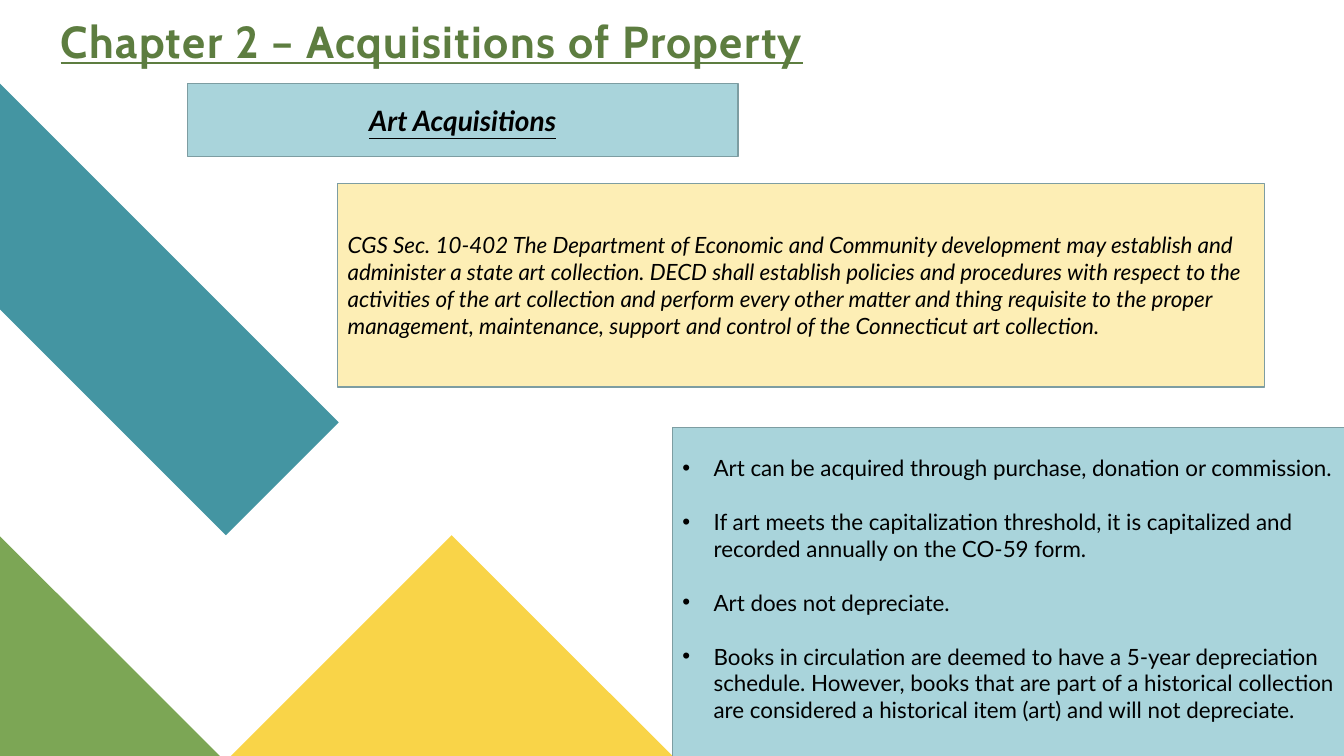
from lxml import etree
from pptx import Presentation
from pptx.dml.color import RGBColor
from pptx.enum.shapes import MSO_SHAPE
from pptx.enum.text import MSO_ANCHOR, PP_ALIGN
from pptx.oxml.ns import qn
from pptx.util import Inches, Pt

RECT = MSO_SHAPE.RECTANGLE
TOP, MID, LOW = MSO_ANCHOR.TOP, MSO_ANCHOR.MIDDLE, MSO_ANCHOR.BOTTOM
LEFT, MIDDLE = PP_ALIGN.LEFT, PP_ALIGN.CENTER

# Content
TITLE = "Chapter 2 – Acquisitions of Property"
TOPIC = "Art Acquisitions"
LAW = (
    "CGS Sec. 10-402 The Department of Economic and Community development may "
    "establish and administer a state art collection. DECD shall establish policies "
    "and procedures with respect to the activities of the art collection and perform "
    "every other matter and thing requisite to the proper management, maintenance, "
    "support and control of the Connecticut art collection."
)
RULES = [
    "Art can be acquired through purchase, donation or commission.",
    "If art meets the capitalization threshold, it is capitalized and recorded "
    "annually on the CO-59 form.",
    "Art does not depreciate.",
    "Books in circulation are deemed to have a 5-year depreciation schedule. "
    "However, books that are part of a historical collection are considered a "
    "historical item (art) and will not depreciate.",
]


class Theme:
    teal, green, gold = "4495A2", "7CA655", "F9D448"
    sky, cream, edge = "A9D4DB", "FDEEB5", "7D9DA2"
    head, ink = "5D7D40", "000000"
    head_font, font = "Cabin", "Lato"
    head_size, topic_size, size = 32, 20, 16


# Corner points of the background art, in inches
ART = [
    (Theme.teal, [(0, 0.83), (0, 3.07), (2.24, 5.31), (3.36, 4.19)]),
    (Theme.green, [(0, 5.32), (0, 7.5), (2.18, 7.5)]),
    (Theme.gold, [(6.67, 7.5), (4.48, 5.31), (2.29, 7.5)]),
]

deck = Presentation()
deck.slide_width, deck.slide_height = Inches(13.33), Inches(7.5)
slide = deck.slides.add_slide(deck.slide_layouts[6])


def paint(shape, fill, line=None):
    shape.shadow.inherit = False
    shape.fill.solid()
    shape.fill.fore_color.rgb = RGBColor.from_string(fill)
    if line:
        shape.line.color.rgb = RGBColor.from_string(line)
        shape.line.width = Pt(1)
    else:
        shape.line.fill.background()


def write(shape, lines, size=Theme.size, font=Theme.font, color=Theme.ink,
          align=LEFT, anchor=MID, bold=False, italic=False, under=False):
    frame = shape.text_frame
    frame.word_wrap = True
    frame.vertical_anchor = anchor
    for i, line in enumerate(lines):
        para = frame.add_paragraph() if i else frame.paragraphs[0]
        para.alignment = align
        run = para.add_run()
        run.text = line
        face = run.font
        face.name, face.size = font, Pt(size)
        face.bold, face.italic, face.underline = bold, italic, under
        face.color.rgb = RGBColor.from_string(color)
    return frame


def panel(x, y, w, h, fill):
    box = slide.shapes.add_shape(RECT, Inches(x), Inches(y), Inches(w), Inches(h))
    paint(box, fill, Theme.edge)
    return box


# Background art
for fill, points in ART:
    pen = slide.shapes.build_freeform(*map(Inches, points[0]), scale=1.0)
    pen.add_line_segments([tuple(map(Inches, p)) for p in points[1:]], close=True)
    paint(pen.convert_to_shape(), fill)

# Title
title = slide.shapes.add_textbox(Inches(0.08), Inches(0.13), Inches(8.41), Inches(0.54))
frame = write(title, [TITLE], size=Theme.head_size, font=Theme.head_font,
              color=Theme.head, align=MIDDLE, anchor=LOW, bold=True, under=True)
frame.margin_left = frame.margin_right = frame.margin_top = frame.margin_bottom = 0
head = frame.paragraphs[0]
head.line_spacing = 0.8
head.runs[0].font._element.set("spc", "100")

# Law and topic panels
write(panel(3.35, 1.82, 9.19, 2.02, Theme.cream), [LAW], italic=True)
write(panel(1.86, 0.83, 5.46, 0.72, Theme.sky), [TOPIC], size=Theme.topic_size,
      align=MIDDLE, bold=True, italic=True, under=True)

# Bulleted rules, one line apart
frame = write(panel(6.67, 4.24, 6.67, 3.27, Theme.sky), RULES, anchor=TOP)
frame.margin_top = Inches(0.27)
for i, para in enumerate(frame.paragraphs):
    if i:
        para.space_before = Pt(Theme.size * 1.2)
    props = para._p.get_or_add_pPr()
    props.set("marL", str(Inches(0.31)))
    props.set("indent", str(-Inches(0.31)))
    etree.SubElement(props, qn("a:buFont"), typeface="Arial")
    etree.SubElement(props, qn("a:buChar"), char="•")

deck.save("out.pptx")
